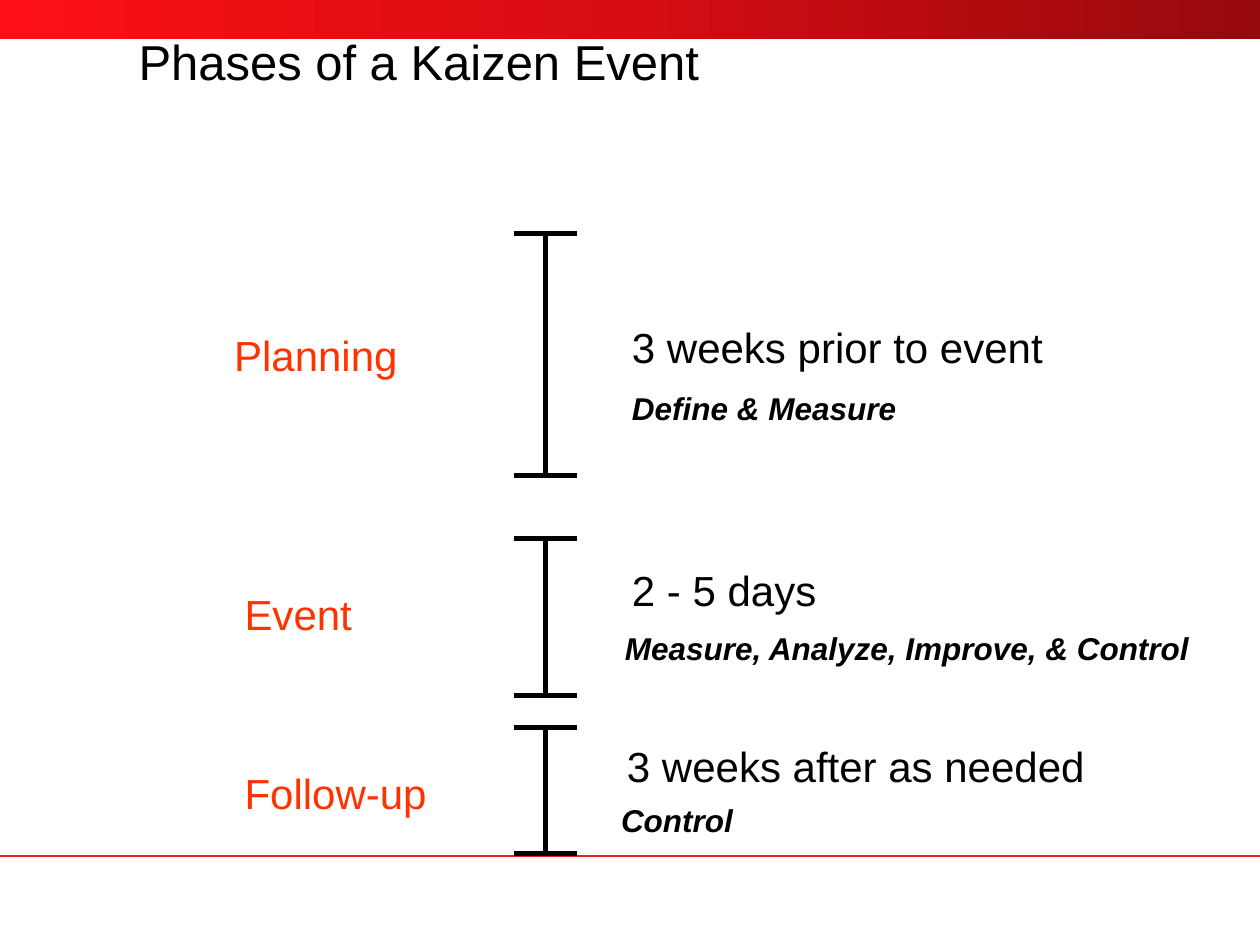
from copy import deepcopy

from lxml import etree
from pptx import Presentation
from pptx.dml.color import RGBColor
from pptx.enum.shapes import MSO_CONNECTOR, MSO_SHAPE
from pptx.enum.text import MSO_ANCHOR, PP_ALIGN
from pptx.oxml.ns import qn
from pptx.util import Cm, Pt

STRAIGHT = MSO_CONNECTOR.STRAIGHT
RECTANGLE = MSO_SHAPE.RECTANGLE
TOP = MSO_ANCHOR.TOP
LEFT = PP_ALIGN.LEFT

BLACK = "000000"
ORANGE = "FF3300"


def add_line(x1, y1, x2, y2, color, width):
    line = slide.shapes.add_connector(STRAIGHT, Cm(x1), Cm(y1), Cm(x2), Cm(y2))
    line.line.color.rgb = RGBColor.from_string(color)
    line.line.width = Pt(width)
    etree.SubElement(line._element.spPr, qn("a:effectLst"))


def add_text(text, left, top, width, height, size, color=BLACK, emphasis=False,
             spacing=1.0, wrap=False):
    box = slide.shapes.add_textbox(Cm(left), Cm(top), Cm(width), Cm(height))
    box.text_frame.text = text
    box.text_frame.word_wrap = wrap
    paragraph = box.text_frame.paragraphs[0]
    paragraph.line_spacing = spacing
    font = paragraph.runs[0].font
    font.name = "Arial"
    font.size = Pt(size)
    font.bold = font.italic = emphasis
    font.color.rgb = RGBColor.from_string(color)


prs = Presentation()
prs.slide_width, prs.slide_height = Cm(25.4), Cm(19.05)
slide = prs.slides.add_slide(prs.slide_layouts[5])

# Gradient band along the top
band = slide.shapes.add_shape(RECTANGLE, 0, 0, prs.slide_width, Cm(0.78))
band.shadow.inherit = False
band.line.fill.background()
band.fill.gradient()
band.fill.gradient_angle = 0
stop_list = band._element.spPr.find(".//" + qn("a:gsLst"))
stop_list.append(deepcopy(stop_list[-1]))
band_colors = ["FC1015", "D50D12", "96090D"]
for stop, position, color in zip(band.fill.gradient_stops, (0, 0.5, 1), band_colors):
    stop.position = position
    stop.color.rgb = RGBColor.from_string(color)

# Footer rule
add_line(0, 17.25, 25.4, 17.25, "ED1F24", 1)

# Title
title = slide.shapes.title
title.left, title.top, title.width, title.height = Cm(2.54), Cm(0.64), Cm(18.52), Cm(1.73)
title.text_frame.text = "Phases of a Kaizen Event"
title.text_frame.vertical_anchor = TOP
heading = title.text_frame.paragraphs[0]
heading.alignment = LEFT
heading.line_spacing = 0.9
heading_font = heading.runs[0].font
heading_font.name = "Arial"
heading_font.size = Pt(28)
heading_font.color.rgb = RGBColor.from_string(BLACK)

# Phases: bar ends, then (text, left, top) of the name and
# (text, left, top, width) of the duration and the steps
phases = [
    (4.7, 9.58, ("Planning", 4.47, 6.42),
     ("3 weeks prior to event", 12.49, 6.35, 8.89),
     ("Define & Measure", 12.49, 7.72, 5.84)),
    (10.85, 14.02, ("Event", 4.68, 11.63),
     ("2 - 5 days", 12.49, 11.25, 4.22),
     ("Measure, Analyze, Improve, & Control", 12.35, 12.55, 11.91)),
    (14.66, 17.2, ("Follow-up", 4.68, 15.24),
     ("3 weeks after as needed", 12.39, 14.81, 10.06),
     ("Control", 12.27, 16.03, 3.58)),
]
bar_x, half_cap = 11, 0.64
name_width = 5.5

for bar_top, bar_bottom, name, duration, steps in phases:
    add_line(bar_x, bar_top, bar_x, bar_bottom, BLACK, 3)
    for cap_y in (bar_top, bar_bottom):
        add_line(bar_x - half_cap, cap_y, bar_x + half_cap, cap_y, BLACK, 3)
    add_text(*name, name_width, 1.3, 24, color=ORANGE, spacing=1.1, wrap=True)
    add_text(*duration, 1.27, 24)
    add_text(*steps, 1.02, 18, emphasis=True, wrap=steps[0] == "Control")

prs.save("out.pptx")
